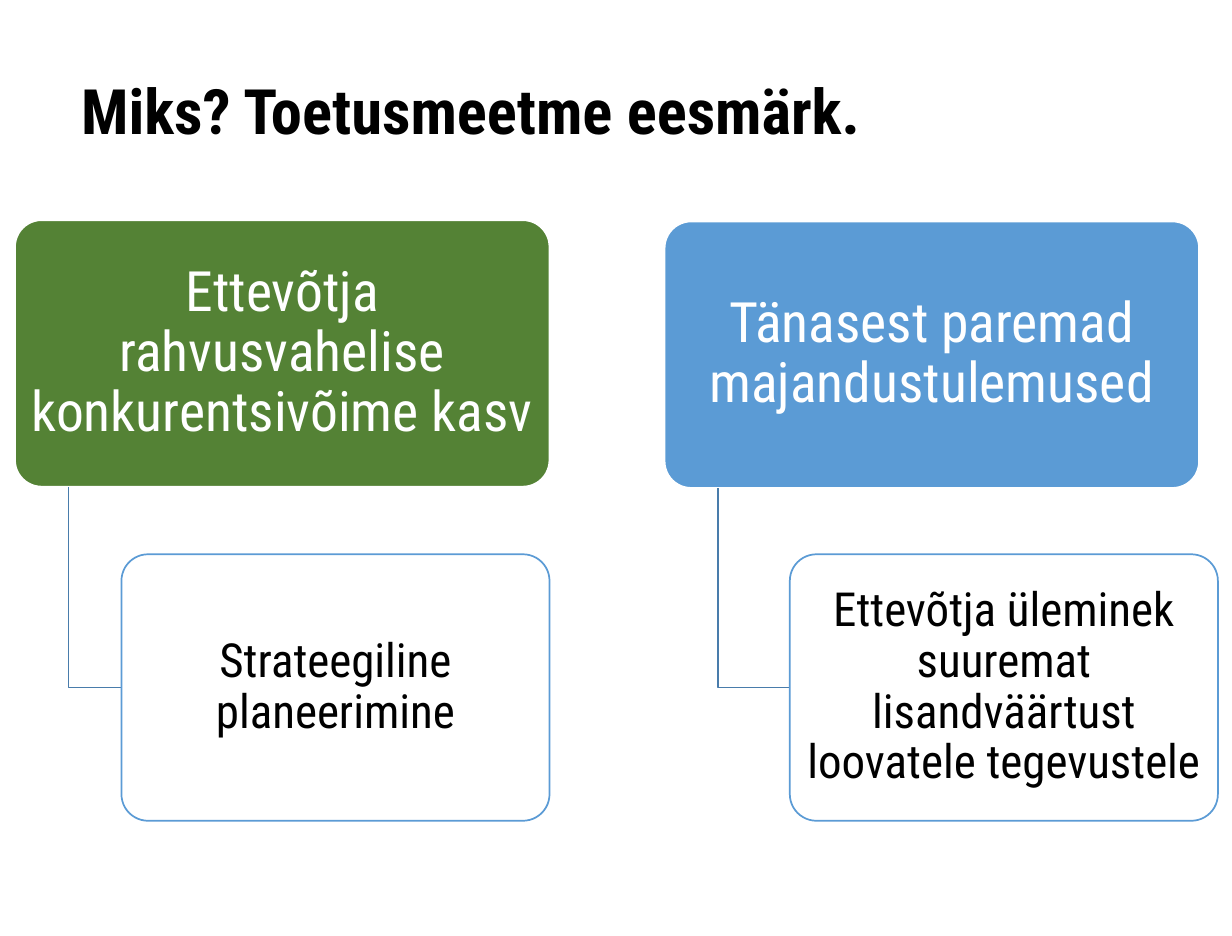
from pptx import Presentation
from pptx import util as u
from pptx.dml.color import RGBColor
from pptx.enum import shapes, text
from pptx.oxml.ns import qn
from lxml import etree

FONT = "Roboto Condensed"
BLACK = RGBColor(0x00, 0x00, 0x00)
WHITE = RGBColor(0xFF, 0xFF, 0xFF)
GREEN = RGBColor(0x54, 0x82, 0x35)
BLUE = RGBColor(0x5B, 0x9B, 0xD5)
LINK = RGBColor(0x49, 0x7C, 0xAB)

BOX_H = 2.13
GOAL_W, RESULT_W = 4.27, 3.42
RESULT_TOP = 4.43


def write(tf, words, size, color, spacing, insets, bold=False):
    tf.word_wrap = True
    tf.margin_left = tf.margin_right = u.Inches(insets[0])
    tf.margin_top = tf.margin_bottom = u.Inches(insets[1])
    p = tf.paragraphs[0]
    p.line_spacing = spacing
    r = p.add_run()
    r.text = words
    r.font.name = FONT
    r.font.size = u.Pt(size)
    r.font.bold = bold
    r.font.color.rgb = color
    return p


def add_title(s, words):
    sp = s.shapes.add_textbox(u.Inches(0.55), u.Inches(0.59), u.Inches(8.66), u.Inches(0.94))
    write(sp.text_frame, words, 36, BLACK, 0.88, (0.1, 0.06), bold=True)


def add_box(s, x, y, w, words, size, color, fill, line, alpha=None):
    sp = s.shapes.add_shape(shapes.MSO_SHAPE.ROUNDED_RECTANGLE,
                            u.Inches(x), u.Inches(y), u.Inches(w), u.Inches(BOX_H))
    sp.adjustments[0] = 0.1
    sp.shadow.inherit = False
    sp.fill.solid()
    sp.fill.fore_color.rgb = fill
    if alpha:
        clr = sp._element.spPr.find(qn("a:solidFill")).find(qn("a:srgbClr"))
        etree.SubElement(clr, qn("a:alpha")).set("val", str(alpha * 1000))
    sp.line.color.rgb = line
    sp.line.width = u.Pt(1)
    tf = sp.text_frame
    tf.vertical_anchor = text.MSO_ANCHOR.MIDDLE
    p = write(tf, words, size, color, 0.9, (0.06, 0.04))
    p.alignment = text.PP_ALIGN.CENTER


def add_elbow(s, x, top, right, bottom):
    x, top, right, bottom = (u.Inches(v) for v in (x, top, right, bottom))
    fb = s.shapes.build_freeform(x, top)
    fb.add_line_segments([(x, bottom), (right, bottom)], close=False)
    sp = fb.convert_to_shape()
    sp.shadow.inherit = False
    sp.fill.background()
    sp.line.color.rgb = LINK
    sp.line.width = u.Pt(1)


def add_branch(s, x, y, result_x, fill, goal, result):
    # Goal on top, elbow from its tenth of width to the middle of the result
    add_box(s, x, y, GOAL_W, goal, 32, WHITE, fill, WHITE)
    add_elbow(s, x + GOAL_W / 10, y + BOX_H, result_x, RESULT_TOP + BOX_H / 2)
    add_box(s, result_x, RESULT_TOP, RESULT_W, result, 27, BLACK, WHITE, BLUE, alpha=90)


def main():
    prs = Presentation()
    # 25 by 19 cm page, about 9.84 by 7.48 inches
    prs.slide_width, prs.slide_height = u.Cm(25), u.Cm(19)
    s = prs.slides.add_slide(prs.slide_layouts[6])

    # Title
    add_title(s, "Miks? Toetusmeetme eesmärk.")

    # Two branches
    add_branch(s, 0.12, 1.76, 0.97, GREEN,
               "Ettevõtja rahvusvahelise konkurentsivõime kasv",
               "Strateegiline planeerimine")
    add_branch(s, 5.31, 1.77, 6.31, BLUE,
               "Tänasest paremad majandustulemused",
               "Ettevõtja üleminek suuremat lisandväärtust loovatele tegevustele")

    prs.save("out.pptx")


if __name__ == "__main__":
    main()
